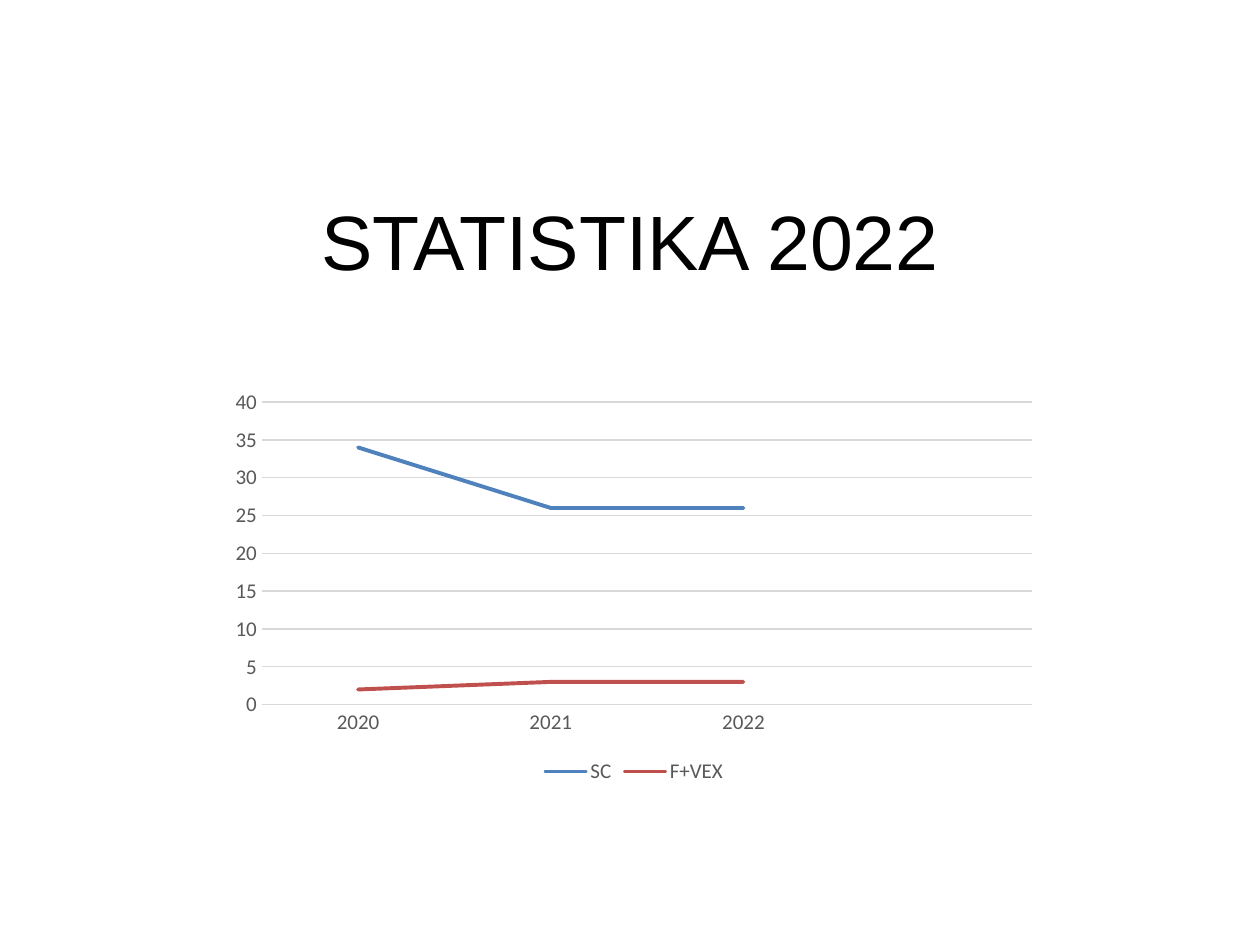
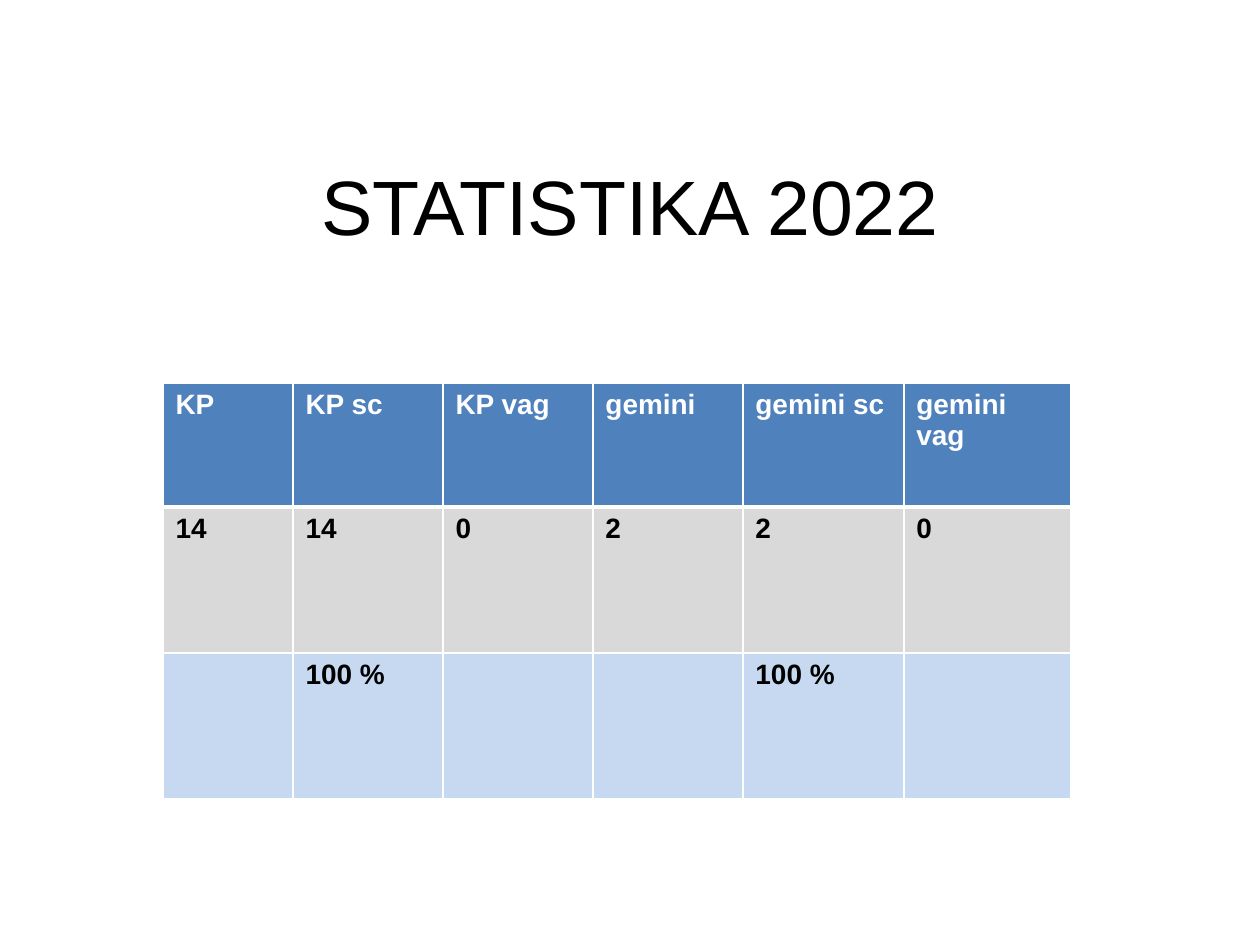
from lxml import etree
from pptx import Presentation
from pptx.chart.data import CategoryChartData
from pptx.dml.color import RGBColor
from pptx.enum.chart import XL_CHART_TYPE, XL_LEGEND_POSITION, XL_MARKER_STYLE, XL_TICK_MARK
from pptx.enum.text import MSO_ANCHOR, MSO_AUTO_SIZE, PP_ALIGN
from pptx.oxml.ns import qn
from pptx.util import Pt

LINE = XL_CHART_TYPE.LINE
BOTTOM = XL_LEGEND_POSITION.BOTTOM
NO_MARKER = XL_MARKER_STYLE.NONE
NO_TICK = XL_TICK_MARK.NONE
MIDDLE = MSO_ANCHOR.MIDDLE
NO_FIT = MSO_AUTO_SIZE.NONE
CENTER = PP_ALIGN.CENTER

EMU_PER_PX = 914400 / 126
SLIDE_SIZE = (1260, 945)
COLORS = {
    "black": "000000", "white": "FFFFFF", "blue": "4F81BD", "red": "C0504D",
    "grey": "D9D9D9", "pale": "C6D9F1", "label": "595959",
}

TITLE = "STATISTIKA 2022"
TITLE_FONT = {"name": "Arial", "size": Pt(44), "bold": False}
CHART_TITLE_BOX = (95, 26, 1071, 470)
TABLE_TITLE_BOX = (95, 26, 1071, 358)
CHART_TITLE_GAP = 48

YEARS = ["2020", "2021", "2022", ""]
SERIES = [
    ("SC", [34, 26, 26, None], "blue"),
    ("F+VEX", [2, 3, 3, None], "red"),
]
CHART_BOX = (211, 293, 847, 496)
PLOT = {"x": 0.06, "y": 0.22, "w": 0.91, "h": 0.61}
LABEL_FONT = {"name": "Calibri", "size": Pt(12)}
VALUE_SCALE = {"minimum_scale": 0, "maximum_scale": 40, "major_unit": 5}

ROWS = [
    ["KP", "KP sc", "KP vag", "gemini", "gemini sc", "gemini vag"],
    ["14", "14", "0", "2", "2", "0"],
    ["", "100 %", "", "", "100 %", ""],
]
ROW_STYLES = [("blue", "white", 1, 3), ("grey", "black", 3, 1), ("pale", "black", 1, 1)]
TABLE_CORNER = (163, 383)
COLUMN_WIDTHS = [130, 150, 150, 150, 161, 167]
ROW_HEIGHTS = [124, 146, 146]
CELL_FONT = {"name": "Arial", "size": Pt(16), "bold": True}


def px(length):
    return round(length * EMU_PER_PX)


def rgb(name):
    return RGBColor.from_string(COLORS[name])


def set_values(target, values):
    for name, value in values.items():
        setattr(target, name, value)


def style_font(font, values, color):
    set_values(font, values)
    font.color.rgb = rgb(color)


def style_line(line, color, width):
    line.color.rgb = rgb(color)
    line.width = Pt(width)


def add_titled_slide(deck, box, bottom_gap=6):
    slide = deck.slides.add_slide(deck.slide_layouts[5])
    title = slide.shapes.title
    set_values(title, dict(zip(("left", "top", "width", "height"), map(px, box))))
    frame = title.text_frame
    set_values(frame, {"auto_size": NO_FIT, "word_wrap": True,
                       "vertical_anchor": MIDDLE, "margin_bottom": px(bottom_gap)})
    para = frame.paragraphs[0]
    para.alignment = CENTER
    span = para.add_run()
    span.text = TITLE
    style_font(span.font, TITLE_FONT, "black")
    return slide


def set_plot_layout(chart):
    plot_area = chart.plots[0]._element.getparent()
    for old in plot_area.findall(qn("c:layout")):
        plot_area.remove(old)
    layout = etree.Element(qn("c:layout"))
    manual = etree.SubElement(layout, qn("c:manualLayout"))
    settings = {"layoutTarget": "inner", "xMode": "edge", "yMode": "edge", **PLOT}
    for name, value in settings.items():
        etree.SubElement(manual, qn(f"c:{name}")).set("val", str(value))
    plot_area.insert(0, layout)


def add_line_chart(slide):
    data = CategoryChartData()
    data.categories = YEARS
    for name, values, color in SERIES:
        data.add_series(name, values)
    chart = slide.shapes.add_chart(LINE, *map(px, CHART_BOX), data).chart
    set_values(chart, {"has_title": False, "has_legend": True})
    style_font(chart.font, LABEL_FONT, "label")
    set_values(chart.legend, {"position": BOTTOM, "include_in_layout": False})
    chart.plots[0].vary_by_categories = False
    for series, (name, values, color) in zip(chart.plots[0].series, SERIES):
        series.smooth = False
        series.marker.style = NO_MARKER
        style_line(series.format.line, color, 2.25)
        series._element.find(f"{qn('c:spPr')}/{qn('a:ln')}").set("cap", "rnd")
    for axis in (chart.category_axis, chart.value_axis):
        set_values(axis, {"major_tick_mark": NO_TICK, "minor_tick_mark": NO_TICK})
        style_font(axis.tick_labels.font, LABEL_FONT, "label")
    style_font(chart.legend.font, LABEL_FONT, "label")
    style_line(chart.category_axis.format.line, "grey", 0.75)
    set_values(chart.value_axis, VALUE_SCALE)
    chart.value_axis.format.line.fill.background()
    style_line(chart.value_axis.major_gridlines.format.line, "grey", 0.75)
    set_plot_layout(chart)


def set_borders(cell, top, bottom):
    properties = cell._tc.get_or_add_tcPr()
    widths = {"lnL": 1, "lnR": 1, "lnT": top, "lnB": bottom}
    for position, (side, width) in enumerate(widths.items()):
        border = etree.Element(qn(f"a:{side}"), w=str(Pt(width)))
        fill = etree.SubElement(border, qn("a:solidFill"))
        etree.SubElement(fill, qn("a:srgbClr"), val=COLORS["white"])
        properties.insert(position, border)


def add_birth_table(slide):
    size = (sum(COLUMN_WIDTHS), sum(ROW_HEIGHTS))
    table = slide.shapes.add_table(
        len(ROWS), len(COLUMN_WIDTHS), *map(px, TABLE_CORNER + size)).table
    for column, width in zip(table.columns, COLUMN_WIDTHS):
        column.width = px(width)
    for row, height, texts, style in zip(table.rows, ROW_HEIGHTS, ROWS, ROW_STYLES):
        row.height = px(height)
        fill, color, top, bottom = style
        for cell, text in zip(row.cells, texts):
            cell.fill.solid()
            cell.fill.fore_color.rgb = rgb(fill)
            set_borders(cell, top, bottom)
            if text:
                span = cell.text_frame.paragraphs[0].add_run()
                span.text = text
                style_font(span.font, CELL_FONT, color)


def main():
    deck = Presentation()
    deck.slide_width, deck.slide_height = map(px, SLIDE_SIZE)
    add_line_chart(add_titled_slide(deck, CHART_TITLE_BOX, CHART_TITLE_GAP))
    add_birth_table(add_titled_slide(deck, TABLE_TITLE_BOX))
    deck.save("out.pptx")


if __name__ == "__main__":
    main()
